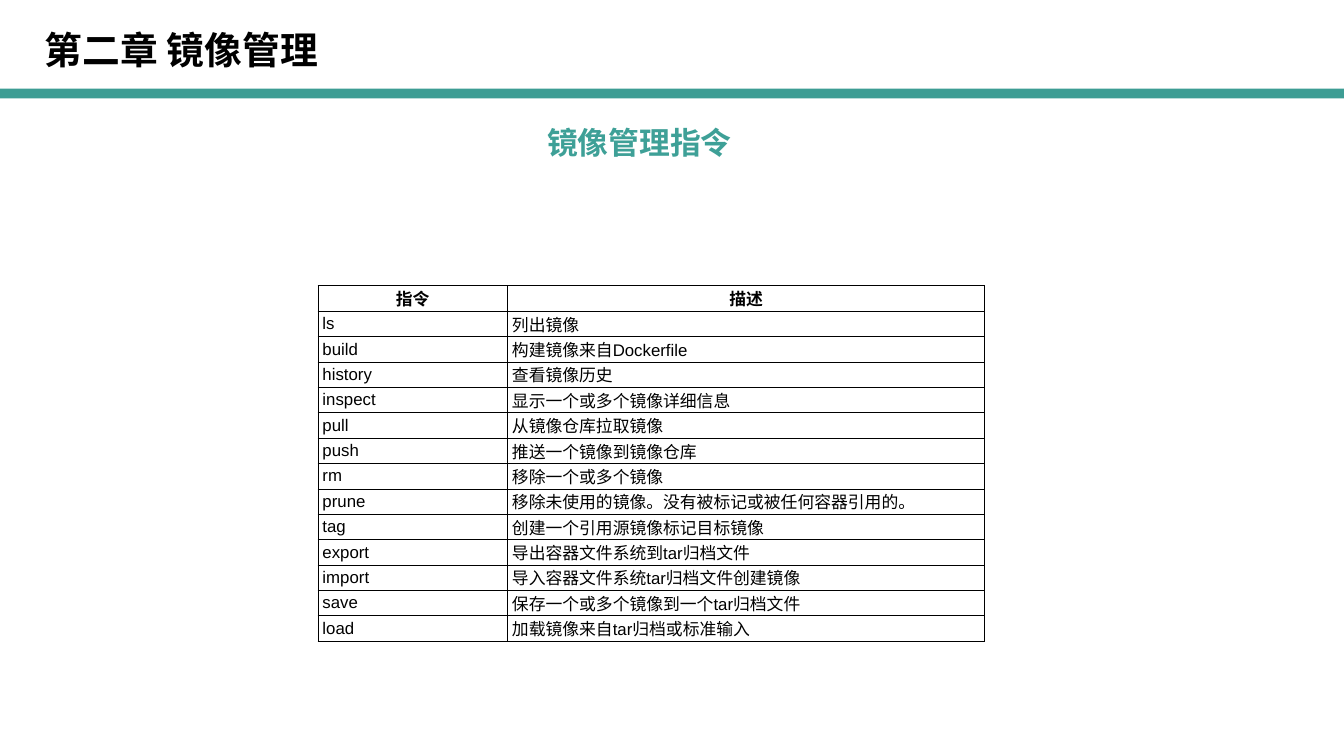
import pptx
import pptx.util
import pptx.dml.color
import pptx.enum.shapes
import pptx.enum.text
import pptx.oxml
from pptx.util import Inches

TITLE = "第二章 镜像管理"
SUBTITLE = "镜像管理指令"
COMMANDS = [
    ("指令", "描述"),
    ("ls", "列出镜像"),
    ("build", "构建镜像来自Dockerfile"),
    ("history", "查看镜像历史"),
    ("inspect", "显示一个或多个镜像详细信息"),
    ("pull", "从镜像仓库拉取镜像"),
    ("push", "推送一个镜像到镜像仓库"),
    ("rm", "移除一个或多个镜像"),
    ("prune", "移除未使用的镜像。没有被标记或被任何容器引用的。"),
    ("tag", "创建一个引用源镜像标记目标镜像"),
    ("export", "导出容器文件系统到tar归档文件"),
    ("import", "导入容器文件系统tar归档文件创建镜像"),
    ("save", "保存一个或多个镜像到一个tar归档文件"),
    ("load", "加载镜像来自tar归档或标准输入"),
]
THEME = {
    "heading_font": "Noto Sans CJK SC", "table_font": "Arial",
    "title_size": 54, "subtitle_size": 44, "table_size": 24,
    "bar": "3D9D94", "accent": "3EA097", "text": "000000", "cell": "FFFFFF",
}
SLIDE_SIZE = (26.67, 15)
BAR_BOX = (0, 1.76, SLIDE_SIZE[0], 0.19)
TITLE_BOX = (0.79, 0.47, 5.73, 1.01)
SUBTITLE_BOX = (10.74, 2.41, 3.9, 0.84)
TABLE_ORIGIN = (6.31, 5.67)
COLUMN_WIDTHS = (3.76, 9.47)
ROW_HEIGHT = 0.5
CELL_MARGINS = (0.09, 0.01)
ALIGN = pptx.enum.text.PP_ALIGN
MIDDLE = pptx.enum.text.MSO_ANCHOR.MIDDLE


def color(name):
    return pptx.dml.color.RGBColor.from_string(THEME[name])


def format_text(text_frame, size, font, color_name, bold, alignment):
    for paragraph in text_frame.paragraphs:
        paragraph.alignment = alignment
        for run in paragraph.runs:
            run.font.size = pptx.util.Pt(THEME[size])
            run.font.bold = bold
            run.font.color.rgb = color(color_name)
            run.font.name = THEME[font]
            east_asian = pptx.oxml.parse_xml(
                '<a:ea xmlns:a="http://schemas.openxmlformats.org/drawingml/2006/main"'
                f' typeface="{THEME["heading_font"]}"/>')
            run.font._element.find(pptx.oxml.ns.qn("a:latin")).addnext(east_asian)


def write_heading(shape, text, box, size, color_name, alignment):
    shape.left, shape.top, shape.width, shape.height = map(Inches, box)
    text_frame = shape.text_frame
    text_frame.text = text
    text_frame.word_wrap = False
    text_frame.auto_size = pptx.enum.text.MSO_AUTO_SIZE.NONE
    text_frame.vertical_anchor = MIDDLE
    format_text(text_frame, size, "heading_font", color_name, True, alignment)


def add_borders(cell):
    properties = cell._tc.get_or_add_tcPr()
    for index, side in enumerate(("lnL", "lnR", "lnT", "lnB")):
        properties.insert(index, pptx.oxml.parse_xml(
            f'<a:{side} xmlns:a="http://schemas.openxmlformats.org/drawingml/2006/main"'
            f' w="12700"><a:solidFill><a:srgbClr val="{THEME["text"]}"/></a:solidFill></a:{side}>'))


def add_command_table(slide):
    table = slide.shapes.add_table(
        len(COMMANDS), len(COLUMN_WIDTHS), *map(Inches, TABLE_ORIGIN),
        Inches(sum(COLUMN_WIDTHS)), Inches(ROW_HEIGHT * len(COMMANDS))).table
    table.horz_banding = False
    for column, width in zip(table.columns, COLUMN_WIDTHS):
        column.width = Inches(width)
    for row_index, values in enumerate(COMMANDS):
        table.rows[row_index].height = Inches(ROW_HEIGHT)
        is_header = row_index == 0
        for column_index, value in enumerate(values):
            cell = table.cell(row_index, column_index)
            cell.text_frame.text = value
            cell.margin_left = cell.margin_right = Inches(CELL_MARGINS[0])
            cell.margin_top = cell.margin_bottom = Inches(CELL_MARGINS[1])
            cell.vertical_anchor = MIDDLE
            cell.fill.solid()
            cell.fill.fore_color.rgb = color("cell")
            add_borders(cell)
            format_text(cell.text_frame, "table_size", "table_font", "text",
                        is_header, ALIGN.CENTER if is_header else ALIGN.LEFT)


def main():
    presentation = pptx.Presentation()
    presentation.slide_width, presentation.slide_height = map(Inches, SLIDE_SIZE)
    slide = presentation.slides.add_slide(presentation.slide_layouts.get_by_name("Title Only"))

    bar = slide.shapes.add_shape(
        pptx.enum.shapes.MSO_SHAPE.RECTANGLE, *map(Inches, BAR_BOX))
    bar.shadow.inherit = False
    bar.fill.solid()
    bar.fill.fore_color.rgb = color("bar")
    bar.line.fill.background()

    write_heading(slide.shapes.title, TITLE, TITLE_BOX, "title_size", "text", ALIGN.LEFT)
    subtitle = slide.shapes.add_textbox(*map(Inches, SUBTITLE_BOX))
    write_heading(subtitle, SUBTITLE, SUBTITLE_BOX, "subtitle_size", "accent", ALIGN.CENTER)
    add_command_table(slide)
    presentation.save("out.pptx")


if __name__ == "__main__":
    main()
